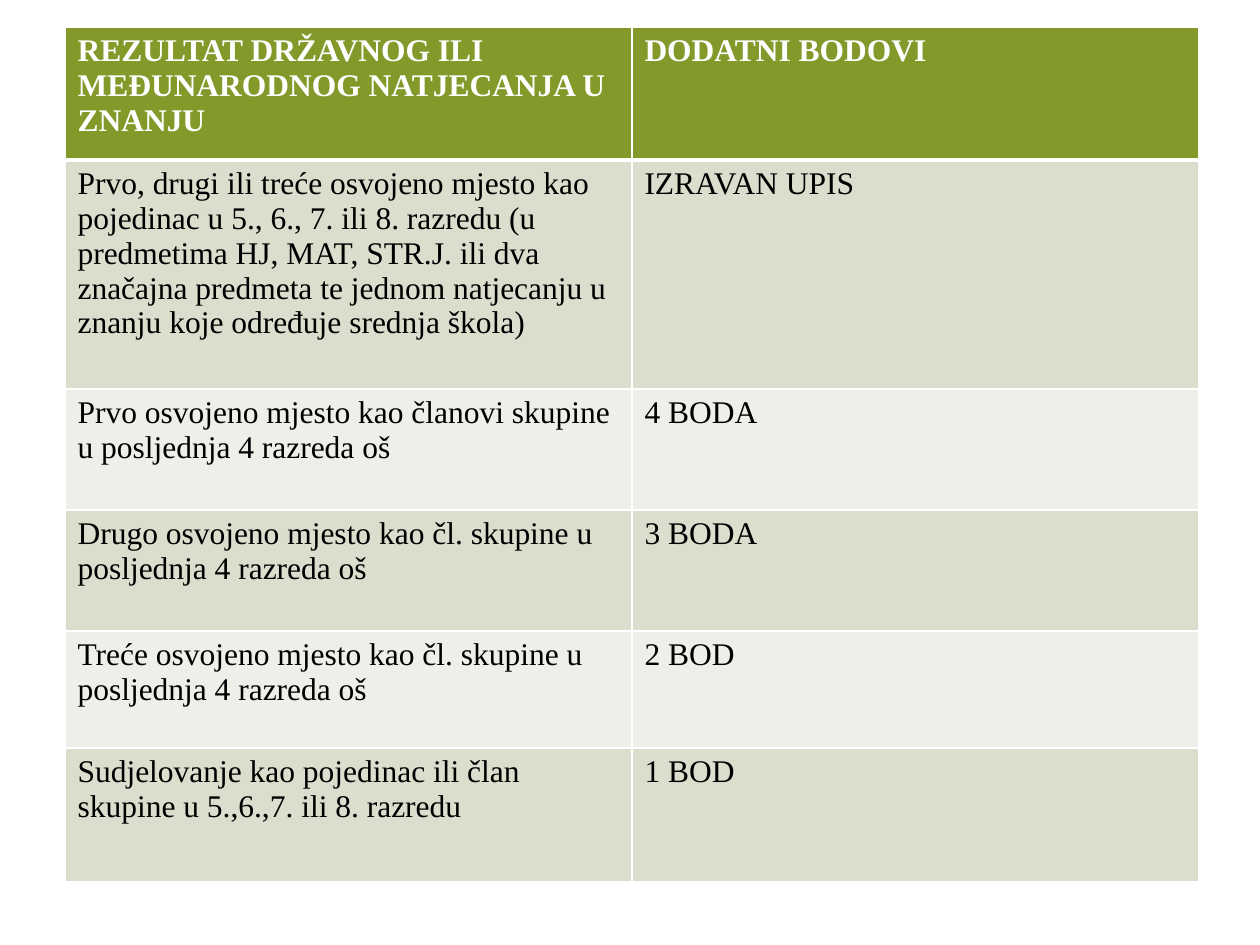
from lxml import etree
from pptx import Presentation
from pptx.dml.color import RGBColor
from pptx.oxml.ns import qn
from pptx.util import Emu, Pt

HEADER = ("REZULTAT DRŽAVNOG ILI MEĐUNARODNOG NATJECANJA U ZNANJU", "DODATNI BODOVI")
RESULTS = [
    ("Prvo, drugi ili treće osvojeno mjesto kao pojedinac u 5., 6., 7. ili 8. razredu "
     "(u predmetima HJ, MAT, STR.J. ili dva značajna predmeta te jednom natjecanju u "
     "znanju koje određuje srednja škola)", "IZRAVAN UPIS"),
    ("Prvo osvojeno mjesto kao članovi skupine u posljednja 4 razreda oš", "4 BODA"),
    ("Drugo osvojeno mjesto kao čl. skupine u posljednja 4 razreda oš", "3 BODA"),
    ("Treće osvojeno mjesto kao čl. skupine u posljednja 4 razreda oš", "2 BOD"),
    ("Sudjelovanje kao pojedinac ili član skupine u 5.,6.,7. ili 8. razredu", "1 BOD"),
]

PX = 914400 // 126
SLIDE_SIZE = (1260, 945)
TABLE_LEFT, TABLE_TOP = 65, 27
COLUMN_WIDTH = 567
ROW_HEIGHTS = [133, 229, 121, 121, 117, 134]

THEME = {
    "font": "Times New Roman",
    "size": 18,
    "header_fill": "83992A",
    "header_text": "FFFFFF",
    "body_text": "000000",
    "bands": ("D9DECD", "EDEFE8"),
    "border": "FFFFFF",
    "border_width": 1,
    "header_rule": 3,
}


def px(length):
    return Emu(length * PX)


def set_borders(cell, top, bottom):
    """Draw all four cell edges; top and bottom are widths in points."""
    properties = cell._tc.get_or_add_tcPr()
    side = THEME["border_width"]
    for tag, width in (("a:lnL", side), ("a:lnR", side), ("a:lnT", top), ("a:lnB", bottom)):
        line = etree.SubElement(properties, qn(tag), w=str(Pt(width)))
        fill = etree.SubElement(line, qn("a:solidFill"))
        etree.SubElement(fill, qn("a:srgbClr"), val=THEME["border"])


def fill_cell(cell, text, row):
    is_header = row == 0
    thin, thick = THEME["border_width"], THEME["header_rule"]
    set_borders(cell, thick if row == 1 else thin, thick if is_header else thin)
    band = THEME["header_fill"] if is_header else THEME["bands"][(row - 1) % 2]
    cell.fill.solid()
    cell.fill.fore_color.rgb = RGBColor.from_string(band)
    cell.text = text
    font = cell.text_frame.paragraphs[0].font
    font.name = THEME["font"]
    font.size = Pt(THEME["size"])
    font.bold = is_header
    color = THEME["header_text" if is_header else "body_text"]
    font.color.rgb = RGBColor.from_string(color)


def add_points_table(page):
    rows = [HEADER, *RESULTS]
    columns = len(HEADER)
    table = page.shapes.add_table(
        len(rows), columns, px(TABLE_LEFT), px(TABLE_TOP),
        px(columns * COLUMN_WIDTH), px(sum(ROW_HEIGHTS))).table
    for column in table.columns:
        column.width = px(COLUMN_WIDTH)
    for row, (texts, height) in enumerate(zip(rows, ROW_HEIGHTS)):
        table.rows[row].height = px(height)
        for column, text in enumerate(texts):
            fill_cell(table.cell(row, column), text, row)


def main():
    deck = Presentation()
    deck.slide_width, deck.slide_height = map(px, SLIDE_SIZE)
    blank_layout = deck.slide_layouts[6]
    add_points_table(deck.slides.add_slide(blank_layout))
    deck.save("out.pptx")


if __name__ == "__main__":
    main()
